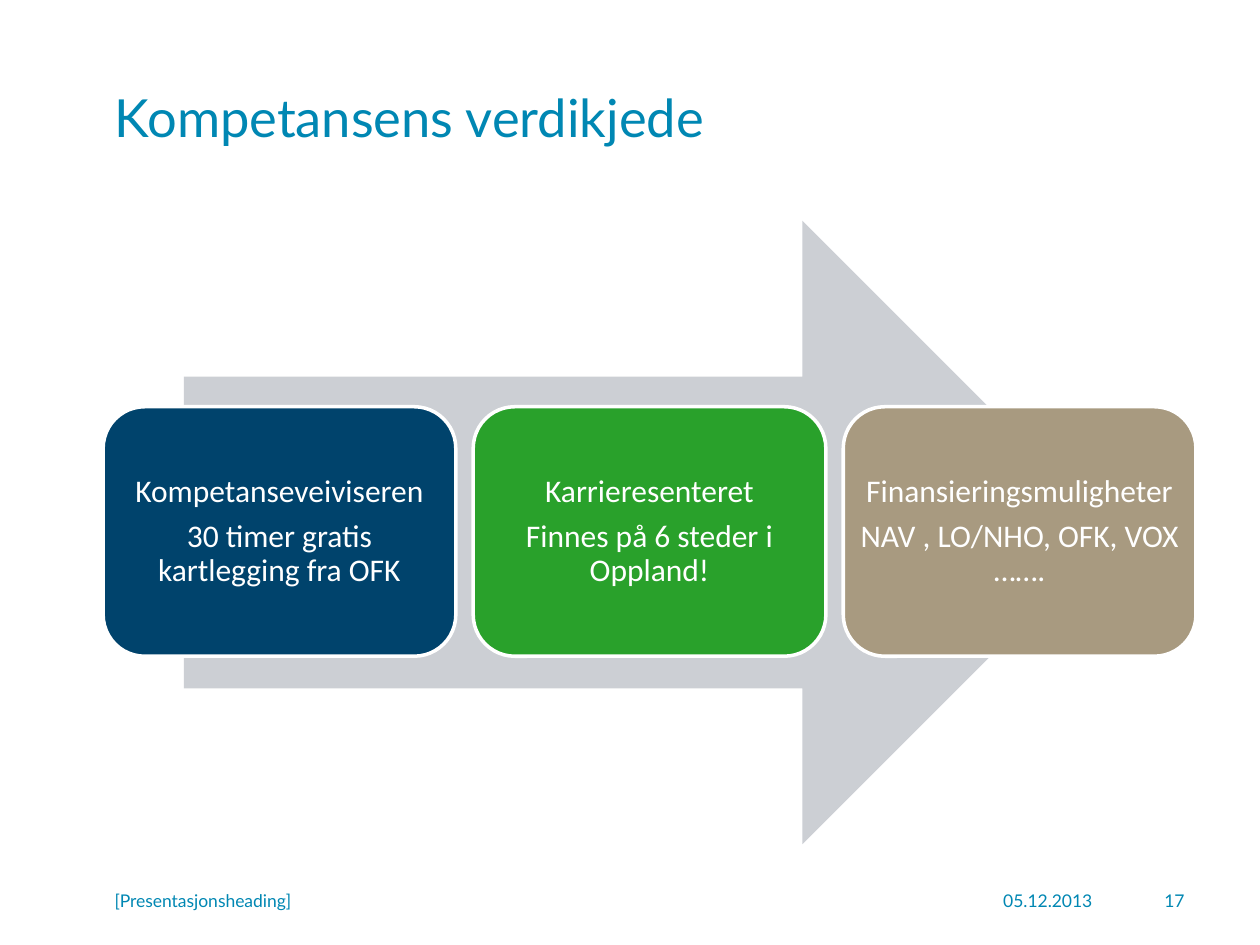
import pptx
import pptx.util
import pptx.dml.color
import pptx.enum.shapes
import pptx.enum.text
from dataclasses import dataclass

Cm, Pt = pptx.util.Cm, pptx.util.Pt
Align = pptx.enum.text.PP_ALIGN
Preset = pptx.enum.shapes.MSO_SHAPE


@dataclass(frozen=True)
class Theme:
    accent: str = "0087B3"
    arrow: str = "CCCFD4"
    white: str = "FFFFFF"
    heading_font: str = "Lato"
    body_font: str = "Calibri"
    title_size: float = 30
    step_size: float = 18
    footer_size: float = 10


THEME = Theme()

TITLE = "Kompetansens verdikjede"
STEPS = [
    ("00436C", ["Kompetanseveiviseren", "30 timer gratis kartlegging fra OFK"]),
    ("29A12B", ["Karrieresenteret", "Finnes på 6 steder i Oppland!"]),
    ("A89A80", ["Finansieringsmuligheter", "NAV , LO/NHO, OFK, VOX ……."]),
]
# text, left and width in cm, alignment
FOOTERS = [
    ("05.12.2013", 18.67, 3.6, Align.RIGHT),
    ("[Presentasjonsheading]", 2.06, 11.73, Align.LEFT),
    ("17", 22.43, 1.7, Align.RIGHT),
]
STEP_LEFT, STEP_TOP, STEP_WIDTH, STEP_HEIGHT, STEP_GAP = 2.08, 8.2, 7.11, 5.03, 0.35


def rgb(value):
    return pptx.dml.color.RGBColor.from_string(value)


def write(shape, lines, font, size, color, align):
    """Fill a shape's text frame, one paragraph per line, centred vertically."""
    frame = shape.text_frame
    frame.word_wrap = True
    frame.vertical_anchor = pptx.enum.text.MSO_ANCHOR.MIDDLE
    for index, line in enumerate(lines):
        para = frame.paragraphs[0] if index == 0 else frame.add_paragraph()
        para.alignment = align
        span = para.add_run()
        span.text = line
        span.font.name = font
        span.font.size = Pt(size)
        span.font.color.rgb = rgb(color)
    return frame


def add_heading_text(page, text, place, size, align=Align.LEFT):
    box = page.shapes.add_textbox(*map(Cm, place))
    write(box, [text], THEME.heading_font, size, THEME.accent, align)


def add_preset(page, preset, place, fill):
    shape = page.shapes.add_shape(preset, *map(Cm, place))
    shape.shadow.inherit = False
    shape.fill.solid()
    shape.fill.fore_color.rgb = rgb(fill)
    shape.line.fill.background()
    return shape


def add_step(page, index, fill, lines):
    left = STEP_LEFT + index * (STEP_WIDTH + STEP_GAP)
    step = add_preset(page, Preset.ROUNDED_RECTANGLE,
                      (left, STEP_TOP, STEP_WIDTH, STEP_HEIGHT), fill)
    step.line.color.rgb = rgb(THEME.white)
    step.line.width = Pt(2)
    frame = write(step, lines, THEME.body_font, THEME.step_size, THEME.white, Align.CENTER)
    frame.margin_left = frame.margin_right = 0
    for para in frame.paragraphs:
        para.line_spacing = 0.9
        para.space_after = Pt(0.35 * THEME.step_size)


def main():
    deck = pptx.Presentation()
    deck.slide_width, deck.slide_height = Cm(25.4), Cm(19.05)
    page = deck.slides.add_slide(deck.slide_layouts[6])
    add_heading_text(page, TITLE, (2.06, 0.76, 22.07, 3.18), THEME.title_size)
    add_preset(page, Preset.RIGHT_ARROW, (3.71, 4.45, 18.75, 12.57), THEME.arrow)
    for index, (fill, lines) in enumerate(STEPS):
        add_step(page, index, fill, lines)
    for text, left, width, align in FOOTERS:
        add_heading_text(page, text, (left, 17.65, width, 1.02), THEME.footer_size, align)
    deck.save("out.pptx")


if __name__ == "__main__":
    main()
